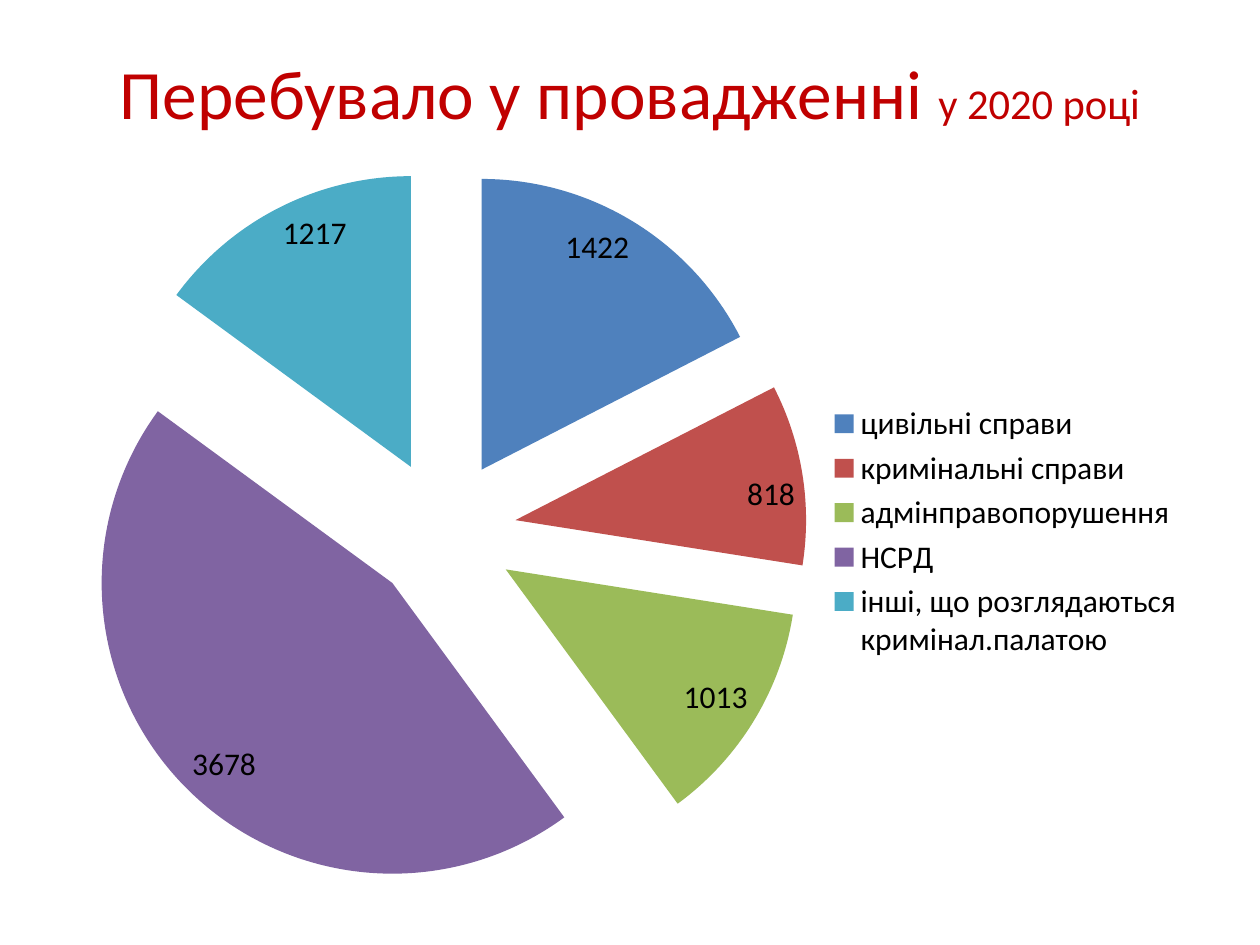
from lxml import etree
from pptx import Presentation
from pptx import util as u
from pptx.chart.data import CategoryChartData
from pptx.dml.color import RGBColor
from pptx.enum import chart as charts, text
from pptx.oxml import ns

COLORS = {
    "title": "C00000",
    "text": "000000",
    "цивільні справи": "4F81BD",
    "кримінальні справи": "C0504D",
    "адмінправопорушення": "9BBB59",
    "НСРД": "8064A2",
    "інші, що розглядаються кримінал.палатою": "4BACC6",
}
CASES = {
    "цивільні справи": 1422,
    "кримінальні справи": 818,
    "адмінправопорушення": 1013,
    "НСРД": 3678,
    "інші, що розглядаються кримінал.палатою": 1217,
}
FONT = "Calibri"

deck = Presentation()
deck.slide_width, deck.slide_height = u.Inches(10), u.Inches(7.5)
page = deck.slides.add_slide(deck.slide_layouts[5])
margin = int(deck.slide_width * 0.05)
content_width = deck.slide_width - 2 * margin
title_top = int(deck.slide_height * 0.04)
title_height = u.Inches(0.85)
chart_top = title_top + title_height

title = page.shapes.title
title.left, title.top = margin, title_top
title.width, title.height = content_width, title_height
frame = title.text_frame
frame.word_wrap = True
frame.auto_size = text.MSO_AUTO_SIZE.NONE
frame.vertical_anchor = text.MSO_ANCHOR.MIDDLE
para = frame.paragraphs[0]
para.alignment = text.PP_ALIGN.CENTER
para.font.name = FONT
para.font.color.rgb = RGBColor.from_string(COLORS["title"])
for words, size in (("Перебувало у провадженні ", 39.6), ("у 2020 році", 24.3)):
    span = para.add_run()
    span.text = words
    span.font.size = u.Pt(size)

data = CategoryChartData()
data.categories = list(CASES)
data.add_series("Series 1", list(CASES.values()))
chart = page.shapes.add_chart(
    charts.XL_CHART_TYPE.PIE, margin, chart_top, content_width, u.Inches(6.14), data
).chart
chart.has_title = False
chart.font.name = FONT
chart.font.size = u.Pt(18)
chart.font.color.rgb = RGBColor.from_string(COLORS["text"])
chart.has_legend = True
chart.legend.position = charts.XL_LEGEND_POSITION.RIGHT
chart.legend.include_in_layout = False

plot = chart.plots[0]
plot.vary_by_categories = True
plot.has_data_labels = True
labels = plot.data_labels
labels.show_value = True
labels.show_percentage = False
labels.position = charts.XL_LABEL_POSITION.INSIDE_END

pie = plot.series[0]
for index, case in enumerate(CASES):
    fill = pie.points[index].format.fill
    fill.solid()
    fill.fore_color.rgb = RGBColor.from_string(COLORS[case])

explosion = etree.Element(ns.qn("c:explosion"), val="25")
pie._element.find(ns.qn("c:dPt")).addprevious(explosion)

deck.save("out.pptx")
